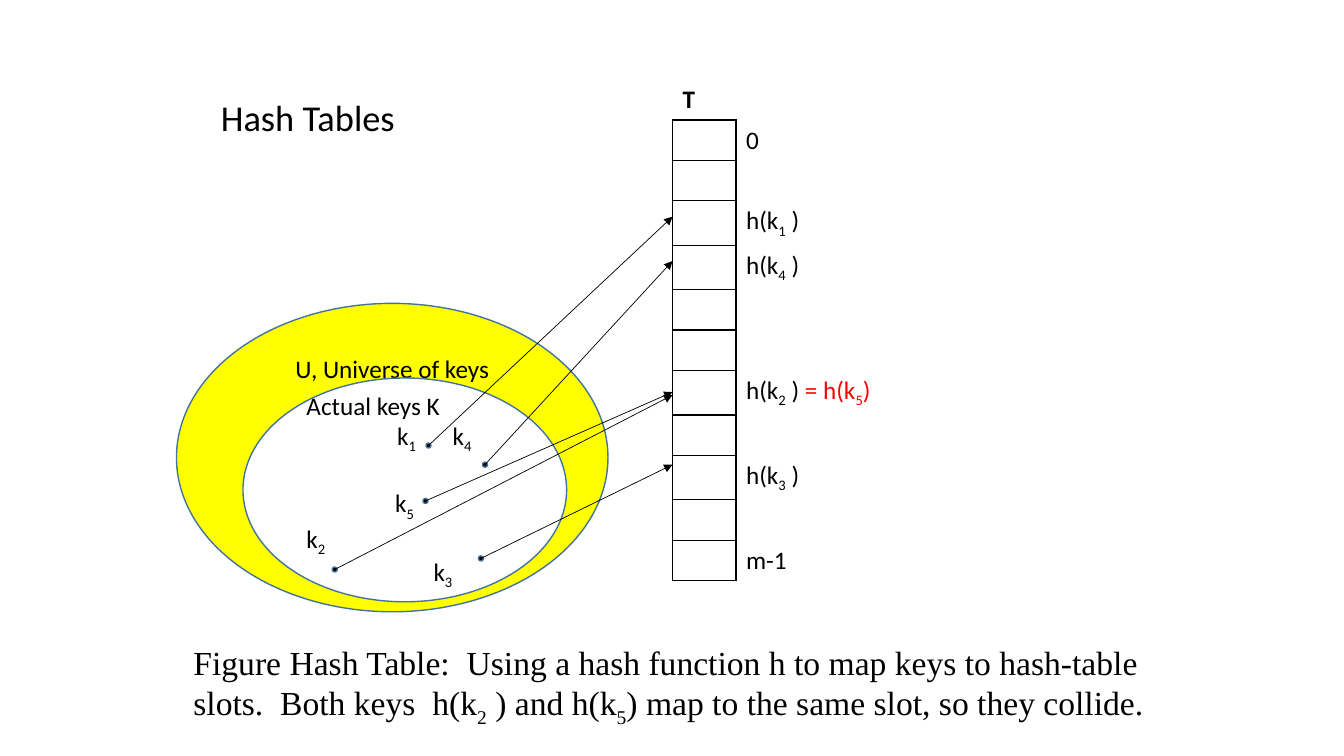
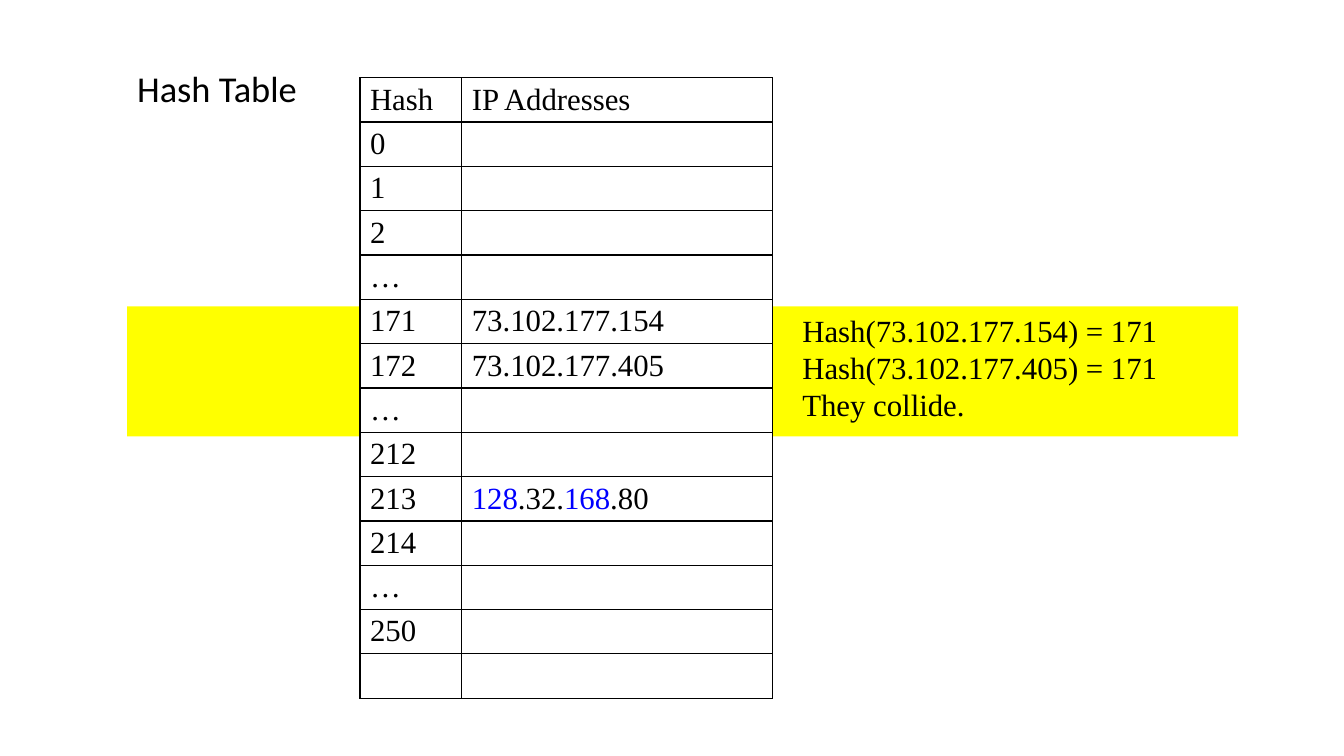
from dataclasses import dataclass

from lxml import etree
from pptx import Presentation
from pptx.dml.color import RGBColor
from pptx.enum.shapes import MSO_CONNECTOR, MSO_SHAPE
from pptx.enum.text import MSO_ANCHOR, MSO_AUTO_SIZE, PP_ALIGN
from pptx.oxml.ns import qn
from pptx.util import Inches, Pt

OVAL, RECT = MSO_SHAPE.OVAL, MSO_SHAPE.RECTANGLE
STRAIGHT = MSO_CONNECTOR.STRAIGHT
TOP, MIDDLE = MSO_ANCHOR.TOP, MSO_ANCHOR.MIDDLE
LEFT, CENTER = PP_ALIGN.LEFT, PP_ALIGN.CENTER


@dataclass(frozen=True)
class Theme:
    black: str = "000000"
    white: str = "FFFFFF"
    yellow: str = "FFFF00"
    red: str = "FF0000"
    blue: str = "0000FF"
    outline: str = "43739E"
    sans: str = "Calibri"
    serif: str = "Times New Roman"
    title: int = 26
    caption: int = 24
    body: int = 22
    label: int = 18


T = Theme()

# Content: a text is a string or a list of (text, colour); "_" lowers the next character
CAPTION = ("Figure Hash Table:  Using a hash function h to map keys to hash-table slots.  "
           "Both keys  h(k_2 ) and h(k_5) map to the same slot, so they collide.")
SLOTS = ["0", "", "h(k_1 )", "h(k_4 )", "", "",
         [("h(k_2 )", T.black), (" = h(k_5)", T.red)], "", "h(k_3 )", "", "m-1"]
# key, label (left, middle), dot centre, height at which its arrow meets the table
KEYS = [
    ("k_1", (3.94, 4.34), (4.25, 4.42), 2.15),
    ("k_4", (4.49, 4.34), (4.81, 4.61), 2.59),
    ("k_5", (3.92, 5.01), (4.22, 4.97), 3.89),
    ("k_2", (3.04, 5.36), (3.32, 5.65), 3.92),
    ("k_3", (4.3, 5.69), (4.77, 5.54), 4.61),
]
ADDRESSES = [
    ("Hash", "IP Addresses"), ("0", ""), ("1", ""), ("2", ""), ("…", ""),
    ("171", "73.102.177.154"), ("172", "73.102.177.405"), ("…", ""), ("212", ""),
    ("213", [("128", T.blue), (".32.", T.black), ("168", T.blue), (".80", T.black)]),
    ("214", ""), ("…", ""), ("250", ""), ("", ""),
]
COLLISION = ["Hash(73.102.177.154) = 171", "Hash(73.102.177.405) = 171", "They collide."]

TABLE_X, TABLE_Y = 6.67, 0.79
DOT = 0.05
LABEL_W, LABEL_H = 0.4, 0.3


def rgb(value):
    return RGBColor.from_string(value)


def box(*lengths):
    return [Inches(v) for v in lengths]


def add_run(p, text, color, lowered=False):
    if text:
        r = p.add_run()
        r.text = text
        if color:
            r.font.color.rgb = rgb(color)
        if lowered:
            r._r.get_or_add_rPr().set("baseline", "-25000")


def write(p, text, font, size, bold=False, align=LEFT):
    p.alignment = align
    p.font.name, p.font.size, p.font.bold = font, Pt(size), bold
    p.font.color.rgb = rgb(T.black)
    for part, color in [(text, None)] if isinstance(text, str) else text:
        head, *tails = part.split("_")
        add_run(p, head, color)
        for tail in tails:
            add_run(p, tail[0], color, lowered=True)
            add_run(p, tail[1:], color)


def add_text(s, at, lines, font, size):
    tf = s.shapes.add_textbox(*box(*at)).text_frame
    tf.word_wrap = True
    for i, line in enumerate(lines):
        write(tf.paragraphs[0] if i == 0 else tf.add_paragraph(), line, font, size)
    return tf


def add_label(s, left, middle, width, text):
    tf = add_text(s, (left, middle - LABEL_H / 2, width, LABEL_H), [text], T.sans, T.label)
    tf.margin_left = tf.margin_right = tf.margin_top = tf.margin_bottom = 0
    tf.vertical_anchor = MIDDLE


def add_filled(s, kind, at, fill, outline=None):
    sp = s.shapes.add_shape(kind, *box(*at))
    sp.shadow.inherit = False
    sp.fill.solid()
    sp.fill.fore_color.rgb = rgb(fill)
    if outline:
        sp.line.color.rgb, sp.line.width = rgb(outline), Pt(1)
    else:
        sp.line.fill.background()
    return sp


def add_arrow(s, start, end):
    line = s.shapes.add_connector(STRAIGHT, *box(*start, *end))
    line.line.color.rgb, line.line.width = rgb(T.black), Pt(0.5)
    etree.SubElement(line.line._get_or_add_ln(), qn("a:tailEnd"), type="triangle")
    etree.SubElement(line._element.spPr, qn("a:effectLst"))


def set_borders(cell, edges):
    tcPr = cell._tc.get_or_add_tcPr()
    for edge in "LRTB":
        ln = etree.SubElement(tcPr, qn("a:ln" + edge), w=str(Pt(1)))
        if edge in edges:
            fill = etree.SubElement(ln, qn("a:solidFill"))
            etree.SubElement(fill, qn("a:srgbClr"), val=T.black)
        else:
            etree.SubElement(ln, qn("a:noFill"))


def add_grid(s, left, top, widths, heights, rows, font, size, edges_of):
    """Table with white cells; edges_of(row, column) names the drawn borders."""
    table = s.shapes.add_table(len(rows), len(widths),
                               *box(left, top, sum(widths), sum(heights))).table
    table.first_row = table.horz_banding = False
    for column, width in zip(table.columns, widths):
        column.width = Inches(width)
    for i, (row, height) in enumerate(zip(rows, heights)):
        table.rows[i].height = Inches(height)
        for j, text in enumerate(row):
            cell = table.cell(i, j)
            set_borders(cell, edges_of(i, j))
            cell.fill.solid()
            cell.fill.fore_color.rgb = rgb(T.white)
            write(cell.text_frame.paragraphs[0], text, font, size, bold=text == "T")


def add_slide(prs, title, left, top):
    s = prs.slides.add_slide(prs.slide_layouts[5])
    sp = s.shapes.title
    sp.left, sp.top, sp.width, sp.height = box(left, top, 2.2, 0.54)
    tf = sp.text_frame
    tf.auto_size, tf.vertical_anchor, tf.word_wrap = MSO_AUTO_SIZE.NONE, TOP, True
    write(tf.paragraphs[0], title, T.sans, T.title)
    return s


def slot_edges(i, j):
    if i == 0:
        return "B" if j == 0 else ""
    return "LRTB" if j == 0 else "L"


def build_mapping(prs):
    s = add_slide(prs, "Hash Tables", 2.09, 0.89)
    add_text(s, (1.82, 6.32, 9.7, 1.21), [CAPTION], T.serif, T.caption)

    # Universe of keys and the keys in use
    universe = add_filled(s, OVAL, (1.75, 3.01, 4.28, 3.06), T.yellow, T.outline)
    universe.text_frame.vertical_anchor = TOP
    write(universe.text_frame.paragraphs[0], "U, Universe of keys", T.sans, T.label, align=CENTER)
    add_filled(s, OVAL, (2.41, 3.75, 3.21, 2.22), T.white, T.outline)
    add_label(s, 3.04, 4.02, 1.6, "Actual keys K")

    # Slots; rows with a lowered index are taller
    rows = [("T", "")] + [("", slot) for slot in SLOTS]
    heights = [0.44 if "_" in str(slot) else 0.4 for _, slot in rows]
    add_grid(s, TABLE_X, TABLE_Y, (0.63, 2.21), heights, rows, T.sans, T.label, slot_edges)

    # Keys and their arrows
    for key, (left, middle), (x, y), slot_y in KEYS:
        add_label(s, left, middle, LABEL_W, key)
        add_filled(s, OVAL, (x - DOT / 2, y - DOT / 2, DOT, DOT), T.black, T.outline)
        add_arrow(s, (x, y), (TABLE_X, slot_y))


def build_addresses(prs):
    s = add_slide(prs, "Hash Table", 1.26, 0.61)
    add_filled(s, RECT, (1.26, 3.04, 11.02, 1.29), T.yellow)
    add_grid(s, 3.57, 0.77, (1.01, 3.08), [0.44] * len(ADDRESSES), ADDRESSES,
             T.serif, T.body, lambda i, j: "LRTB")
    add_text(s, (7.86, 3.04, 4.53, 1.21), COLLISION, T.serif, T.body)


def main():
    prs = Presentation()
    prs.slide_width, prs.slide_height = box(13.33, 7.5)
    build_mapping(prs)
    build_addresses(prs)
    prs.save("out.pptx")


if __name__ == "__main__":
    main()
